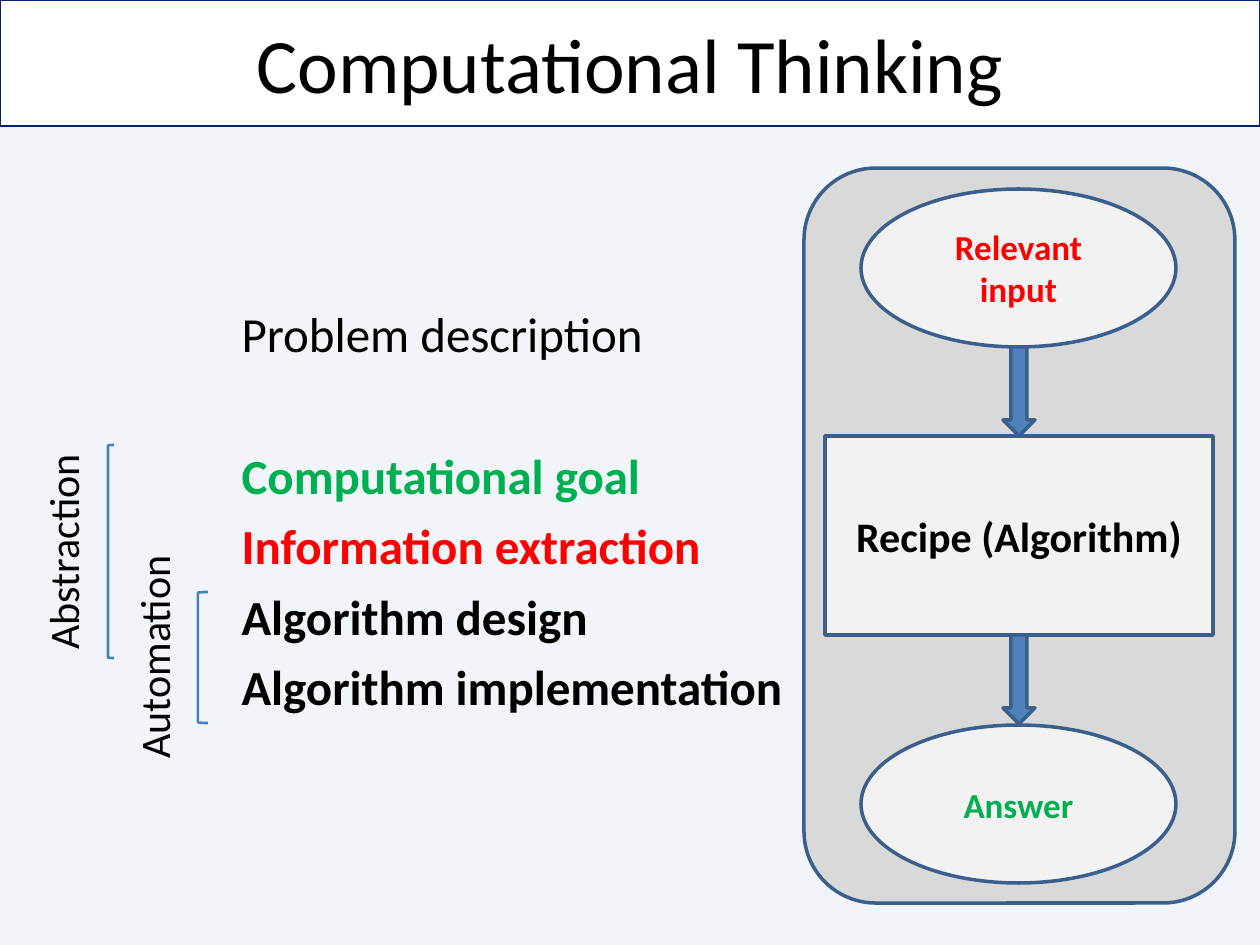
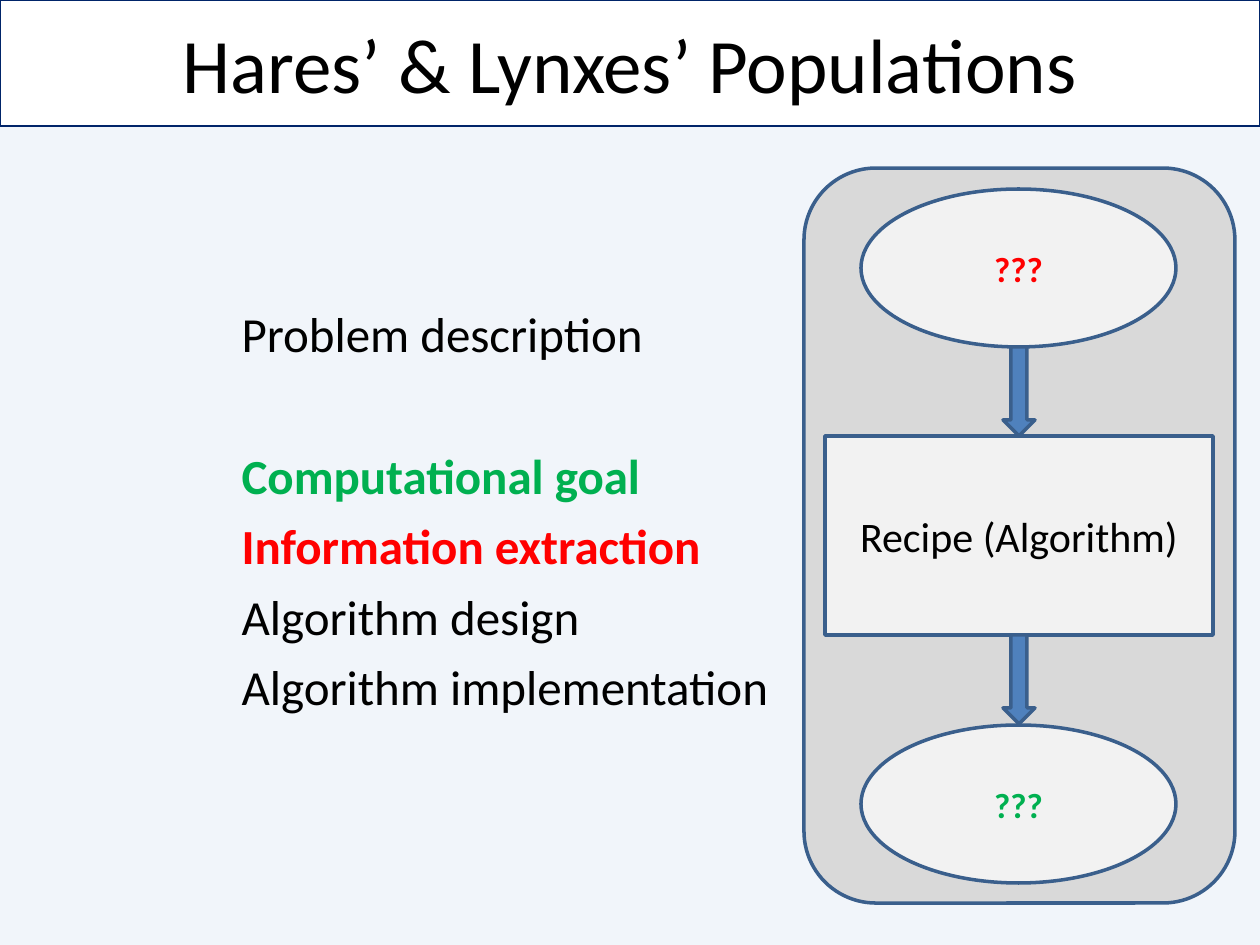
"""Build two slides on computational thinking as an input, recipe and answer flow."""
from lxml import etree
from pptx import Presentation
from pptx import util as u
from pptx.dml.color import RGBColor
from pptx.enum import shapes, text
from pptx.oxml import ns

SHAPE = shapes.MSO_SHAPE
BLACK, WHITE, RED, GREEN = "000000", "FFFFFF", "FF0000", "00B050"
BACKDROP, NAVY, EDGE = "F1F5FA", "002469", "3A5F8C"
PANEL, PALE, ARROW, BRACKET = "D9D9D9", "F2F2F2", "4F81BD", "4B7EBC"


def rgb(value):
    return RGBColor.from_string(value)


def px(n):
    return u.Emu(round(n * 914400 / 126))


class Deck:
    font = "Calibri"

    def __init__(self):
        self.prs = Presentation()
        self.prs.slide_width, self.prs.slide_height = px(1260), px(945)
        fill = self.prs.slide_master.background.fill
        fill.solid()
        fill.fore_color.rgb = rgb(BACKDROP)
        self.s = None

    def place(self, sp, box):
        sp.left, sp.top, sp.width, sp.height = map(px, box)

    def paint(self, sp, fill, line, width):
        if fill:
            sp.fill.solid()
            sp.fill.fore_color.rgb = rgb(fill)
        else:
            sp.fill.background()
        sp.line.color.rgb = rgb(line)
        sp.line.width = u.Pt(width)

    def run(self, p, words, size, color=BLACK, bold=False):
        r = p.add_run()
        r.text = words
        r.font.name, r.font.size, r.font.bold = self.font, u.Pt(size), bold
        r.font.color.rgb = rgb(color)

    def slide(self, title):
        self.s = self.prs.slides.add_slide(self.prs.slide_layouts[1])
        sp = self.s.shapes.title
        self.place(sp, (0, 0, 1260, 126))
        self.paint(sp, WHITE, NAVY, 0.75)
        tf = sp.text_frame
        tf.auto_size = text.MSO_AUTO_SIZE.NONE
        tf.vertical_anchor = text.MSO_ANCHOR.MIDDLE
        p = tf.paragraphs[0]
        p.alignment = text.PP_ALIGN.CENTER
        self.run(p, title, 44)

    def shape(self, kind, box, fill, line=EDGE, width=2):
        sp = self.s.shapes.add_shape(kind, *map(px, box))
        sp.shadow.inherit = False
        self.paint(sp, fill, line, width)
        return sp

    def node(self, kind, box, words, size, color=BLACK, bold=True):
        tf = self.shape(kind, box, PALE).text_frame
        tf.word_wrap = True
        tf.vertical_anchor = text.MSO_ANCHOR.MIDDLE
        p = tf.paragraphs[0]
        p.alignment = text.PP_ALIGN.CENTER
        self.run(p, words, size, color, bold)

    def vertical_label(self, box, words):
        tf = self.s.shapes.add_textbox(*map(px, box)).text_frame
        tf.word_wrap = False
        tf.auto_size = text.MSO_AUTO_SIZE.SHAPE_TO_FIT_TEXT
        tf._txBody.bodyPr.set("vert", "vert270")
        p = tf.paragraphs[0]
        p.alignment = text.PP_ALIGN.CENTER
        self.run(p, words, 24)

    def steps(self, items):
        sp = self.s.placeholders[1]
        self.place(sp, (229, 297, 574, 431))
        tf = sp.text_frame
        tf.word_wrap = True
        tf.auto_size = text.MSO_AUTO_SIZE.NONE
        for i, (words, color, bold) in enumerate(items):
            p = tf.add_paragraph() if i else tf.paragraphs[0]
            p.space_before = u.Pt(47.4 if i == 1 else 6.7)
            pPr = p._p.get_or_add_pPr()
            pPr.set("marL", "0")
            pPr.set("indent", "0")
            etree.SubElement(pPr, ns.qn("a:buNone"))
            self.run(p, words, 28, color, bold)

    def flow(self, source, result, bold_recipe):
        self.shape(SHAPE.ROUNDED_RECTANGLE, (804, 168, 431, 735), PANEL)
        self.node(SHAPE.FLOWCHART_PROCESS, (825, 436, 388, 199),
                  "Recipe (Algorithm)", 24, bold=bold_recipe)
        for y, words, color in ((189, source, RED), (725, result, GREEN)):
            self.node(SHAPE.OVAL, (861, y, 315, 158), words, 20, color)
        for y in (347, 635):
            self.shape(SHAPE.DOWN_ARROW, (1003, y, 32, 89), ARROW)

    def bracket(self, box):
        self.shape(SHAPE.LEFT_BRACKET, box, None, BRACKET, 1.5)


def build(deck, title, source, result, bold_recipe):
    deck.slide(title)
    deck.flow(source, result, bold_recipe)
    deck.steps([
        ("Problem description", BLACK, False),
        ("Computational goal", GREEN, True),
        ("Information extraction", RED, True),
        ("Algorithm design", BLACK, bold_recipe),
        ("Algorithm implementation", BLACK, bold_recipe),
    ])


def main():
    deck = Deck()
    build(deck, "Computational Thinking", "Relevant input", "Answer", True)
    deck.bracket((108, 445, 6, 213))
    deck.vertical_label((31, 447, 77, 210), "Abstraction")
    deck.vertical_label((122, 548, 77, 218), "Automation")
    deck.bracket((198, 592, 10, 131))
    build(deck, "Hares’ & Lynxes’ Populations", "???", "???", False)
    deck.prs.save("out.pptx")


if __name__ == "__main__":
    main()
